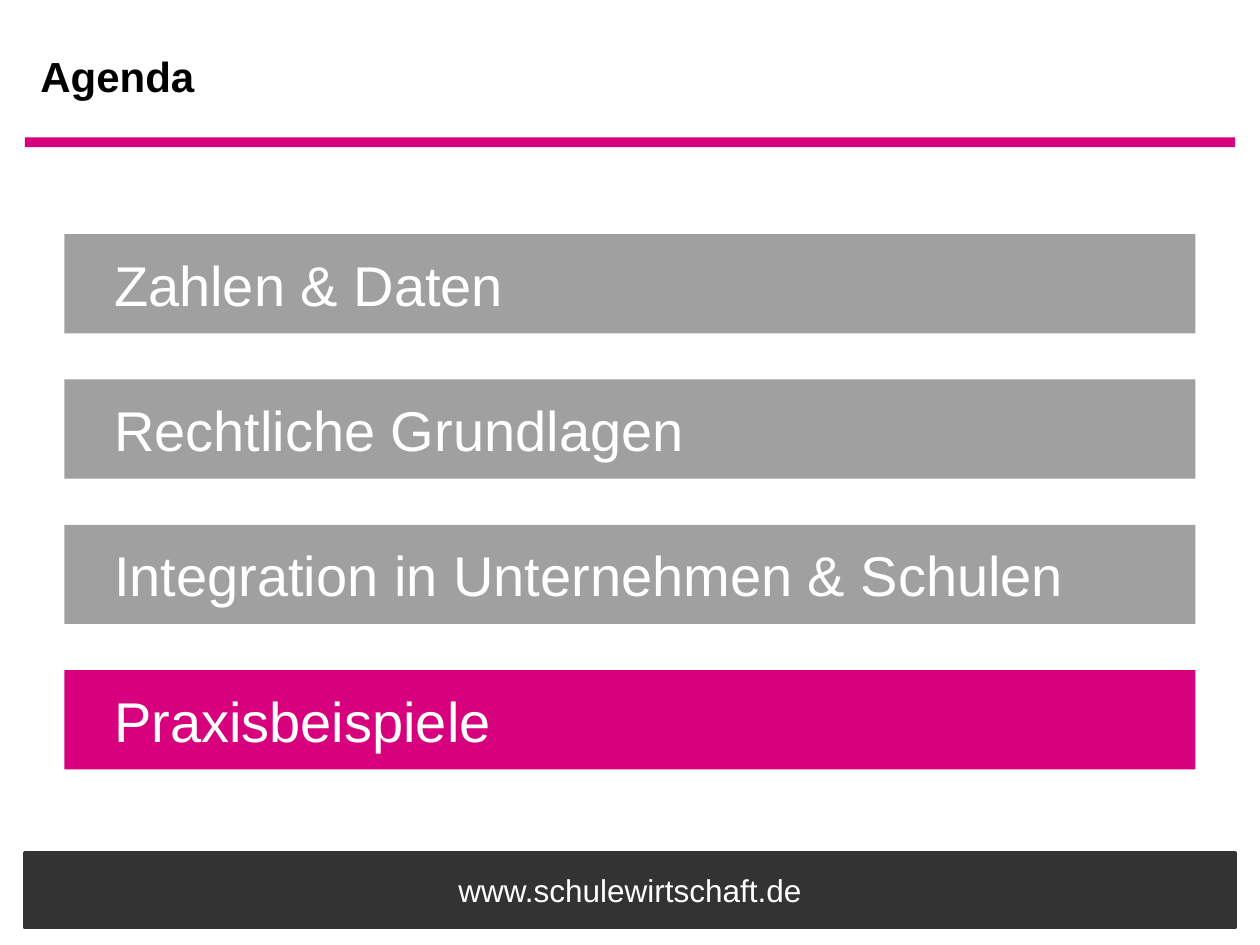
from lxml.etree import SubElement
from pptx import Presentation
from pptx.dml.color import RGBColor
from pptx.enum.shapes import MSO_SHAPE
from pptx.enum.text import MSO_ANCHOR, MSO_AUTO_SIZE, PP_ALIGN
from pptx.oxml.ns import qn
from pptx.util import Cm, Pt

# Content
TITLE = "Agenda"
TOPICS = [
    "Zahlen & Daten",
    "Rechtliche Grundlagen",
    "Integration in Unternehmen & Schulen",
    "Praxisbeispiele",
]
CURRENT_TOPIC = "Praxisbeispiele"
FOOTER = "www.schulewirtschaft.de"

COLORS = {
    "black": "000000",
    "white": "FFFFFF",
    "dark": "333333",
    "gray": "A0A0A0",
    "magenta": "D7007D",
}

# Layout in centimetres
BAND_LEFT, BAND_WIDTH = 0.5, 24.4
TOPIC_LEFT, TOPIC_TOP, TOPIC_WIDTH, TOPIC_HEIGHT = 1.3, 4.72, 22.8, 2
TOPIC_STEP = 2.93


def color(name):
    return RGBColor.from_string(COLORS[name])


def place(shape, left, top, width, height):
    shape.left, shape.top = Cm(left), Cm(top)
    shape.width, shape.height = Cm(width), Cm(height)


def add_band(page, top, height, fill):
    band = page.shapes.add_shape(
        MSO_SHAPE.RECTANGLE, Cm(BAND_LEFT), Cm(top), Cm(BAND_WIDTH), Cm(height))
    band.shadow.inherit = False
    band.fill.solid()
    band.fill.fore_color.rgb = color(fill)
    band.line.fill.background()
    return band


def write(shape, text, size, text_color, align=PP_ALIGN.LEFT, bold=False):
    frame = shape.text_frame
    frame.text = text
    frame.word_wrap = True
    frame.auto_size = MSO_AUTO_SIZE.NONE
    frame.vertical_anchor = MSO_ANCHOR.MIDDLE
    paragraph = frame.paragraphs[0]
    paragraph.alignment = align
    paragraph.space_before = Pt(0)
    font = paragraph.runs[0].font
    font.name, font.size, font.bold = "Arial", Pt(size), bold
    font.color.rgb = color(text_color)


def remove_bullet(paragraph):
    properties = paragraph._p.get_or_add_pPr()
    properties.set("marL", "0")
    properties.set("indent", "0")
    SubElement(properties, qn("a:buNone"))


deck = Presentation()
deck.slide_width, deck.slide_height = Cm(25.4), Cm(19.05)
# The comparison layout offers a title and four body placeholders
page = deck.slides.add_slide(deck.slide_layouts.get_by_name("Comparison"))

# Title and rule below it
title = page.shapes.title
place(title, 0.56, 0.66, 15, 1.75)
write(title, TITLE, 24, "black", bold=True)
add_band(page, 2.77, 0.2, "magenta")

# Agenda topics, the current one highlighted
bodies = [box for box in page.placeholders if box.placeholder_format.idx > 0]
for index, (box, topic) in enumerate(zip(bodies, TOPICS)):
    place(box, TOPIC_LEFT, TOPIC_TOP + index * TOPIC_STEP, TOPIC_WIDTH, TOPIC_HEIGHT)
    box.fill.solid()
    box.fill.fore_color.rgb = color("magenta" if topic == CURRENT_TOPIC else "gray")
    write(box, topic, 32, "white")
    remove_bullet(box.text_frame.paragraphs[0])
    frame = box.text_frame
    frame.margin_left = Cm(1)
    frame.margin_top = frame.margin_right = frame.margin_bottom = 0

# Footer band
footer = add_band(page, 17.2, 1.5, "dark")
footer.line.color.rgb = color("dark")
footer.line.width = Pt(2)
write(footer, FOOTER, 18, "white", PP_ALIGN.CENTER)

deck.save("out.pptx")
